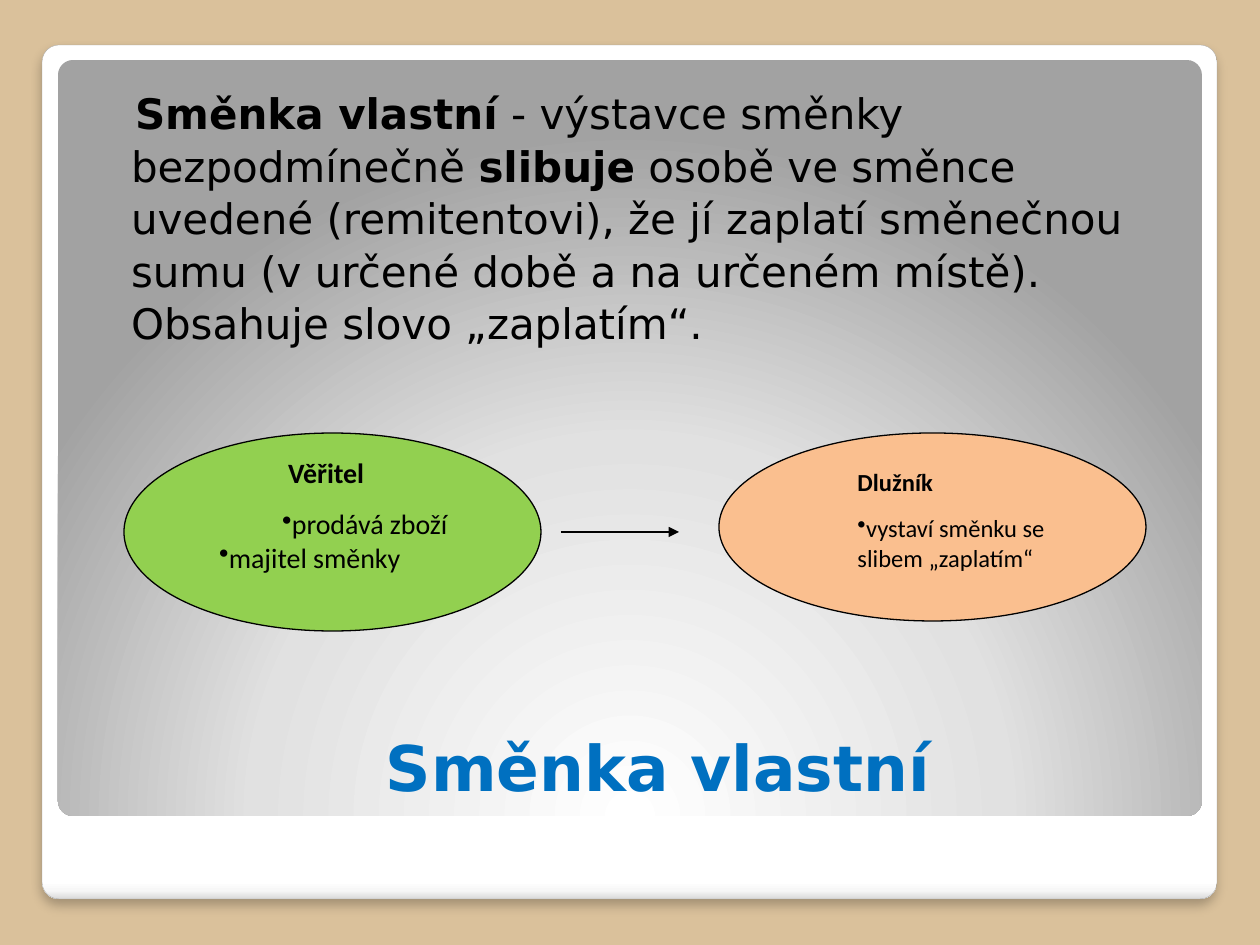
from lxml import etree
from pptx import Presentation
from pptx import util as u
from pptx.dml.color import RGBColor
from pptx.enum import shapes, text
from pptx.oxml.ns import qn

SCALE = 914400 / 126
SANS, BODY = "DejaVu Sans", "Calibri"

PANELS = [
    dict(box=(42, 45, 1175, 854), ang=90, shade=True,
         stops=[(0, "FFFFFF"), (98, "FFFFFF"), (99, "F7F7F7"), (100, "DADADA")]),
    dict(box=(58, 60, 1144, 756), ang=None, shade=False,
         stops=[(0, "FFFFFF"), (55, "E1E1E1"), (100, "A2A2A2")]),
]
TITLE = "Směnka vlastní"
INTRO = [
    ("Směnka vlastní", True),
    (" - výstavce směnky bezpodmínečně ", False),
    ("slibuje", True),
    (" osobě ve směnce uvedené (remitentovi), že jí zaplatí směnečnou sumu "
     "(v\u00a0určené době a na určeném místě). Obsahuje slovo „zaplatím“.", False),
]
PARTIES = [
    dict(box=(124, 433, 417, 198), fill="92D050", size=16, pad=(34, 0, 0, 34),
         anchor=text.MSO_ANCHOR.MIDDLE,
         lines=[("Věřitel", 69), ("prodává zboží", 63), ("majitel směnky", 0)]),
    dict(box=(719, 433, 427, 188), fill="FABF8F", size=14, pad=(13, 6, 13, 6),
         anchor=text.MSO_ANCHOR.TOP,
         lines=[("Dlužník", 63), ("vystaví směnku se slibem „zaplatím“", 63)]),
]
ARROW = (561, 532, 679, 532)


def px(n):
    return u.Emu(round(n * SCALE))


def rgb(code):
    return RGBColor.from_string(code)


def sub(node, tag, **attrs):
    return etree.SubElement(node, qn("a:" + tag), {k: str(v) for k, v in attrs.items()})


def style(para, size, face, color, bold=None):
    font = para.font
    font.size, font.name, font.bold = u.Pt(size), face, bold
    font.color.rgb = rgb(color)


def indent(para, left, first=0):
    props = para._p.get_or_add_pPr()
    props.set("marL", str(px(left)))
    props.set("indent", str(px(first)))
    return props


def frame(shape, pad, anchor):
    tf = shape.text_frame
    tf.word_wrap = True
    tf.margin_left, tf.margin_top, tf.margin_right, tf.margin_bottom = map(px, pad)
    tf.vertical_anchor = anchor
    return tf


def add_panel(slide, box, ang, shade, stops):
    panel = slide.shapes.add_shape(shapes.MSO_SHAPE.ROUNDED_RECTANGLE, *map(px, box))
    panel.adjustments[0] = 0.02
    panel.shadow.inherit = False
    panel.line.fill.background()
    panel.fill.gradient()
    props = panel._element.spPr
    grad = props.find(qn("a:gradFill"))
    for child in list(grad):
        grad.remove(child)
    group = sub(grad, "gsLst")
    for pos, color in stops:
        sub(sub(group, "gs", pos=pos * 1000), "srgbClr", val=color)
    if ang is None:
        way = sub(grad, "path", path="circle")
        sub(way, "fillToRect", l=50000, t=175000, r=50000, b=-75000)
    else:
        sub(grad, "lin", ang=ang * 60000, scaled=0)
    if shade:
        panel.line.color.rgb = rgb("A4A4A4")
        panel.line.width = u.Pt(0.16)
        glow = sub(props.find(qn("a:effectLst")), "outerShdw", blurRad=u.Pt(6),
                   dist=u.Pt(4), dir=5400000, rotWithShape=0)
        sub(sub(glow, "srgbClr", val="000000"), "alpha", val=25000)


def add_intro(slide):
    box = slide.shapes.add_textbox(*map(px, (69, 73, 1128, 668)))
    para = frame(box, (25, 13, 13, 6), text.MSO_ANCHOR.TOP).paragraphs[0]
    indent(para, 37, 4)
    para.line_spacing = 1.04
    style(para, 24, SANS, "000000")
    for words, bold in INTRO:
        run = para.add_run()
        run.text, run.font.bold = words, bold


def add_title(slide):
    box = slide.shapes.add_textbox(*map(px, (94, 701, 1128, 109)))
    para = frame(box, (13, 6, 13, 6), text.MSO_ANCHOR.BOTTOM).paragraphs[0]
    para.text = TITLE
    para.alignment = text.PP_ALIGN.CENTER
    style(para, 36, SANS, "0070C0", True)


def add_party(slide, box, fill, size, pad, anchor, lines):
    oval = slide.shapes.add_shape(shapes.MSO_SHAPE.OVAL, *map(px, box))
    oval.shadow.inherit = False
    oval.fill.solid()
    oval.fill.fore_color.rgb = rgb(fill)
    oval.line.color.rgb = rgb("000000")
    oval.line.width = u.Pt(0.75)
    tf = frame(oval, pad, anchor)
    for i, (words, left) in enumerate(lines):
        para = tf.add_paragraph() if i else tf.paragraphs[0]
        para.text = words
        para.alignment = text.PP_ALIGN.LEFT
        props = indent(para, left)
        if i:
            sub(props, "buChar", char="•")
        else:
            para.space_after = u.Pt(10)
        style(para, size, BODY, "000000", i == 0)


def add_arrow(slide):
    line = slide.shapes.add_connector(shapes.MSO_CONNECTOR.STRAIGHT, *map(px, ARROW))
    line.line.color.rgb = rgb("000000")
    line.line.width = u.Pt(1.25)
    sub(line.line._get_or_add_ln(), "tailEnd", type="triangle")
    sub(line._element.spPr, "effectLst")


def main():
    deck = Presentation()
    deck.slide_width, deck.slide_height = px(1260), px(945)
    slide = deck.slides.add_slide(deck.slide_layouts[6])
    back = slide.background.fill
    back.solid()
    back.fore_color.rgb = rgb("DAC19B")
    for panel in PANELS:
        add_panel(slide, **panel)
    add_title(slide)
    add_intro(slide)
    for party in PARTIES:
        add_party(slide, **party)
    add_arrow(slide)
    deck.save("out.pptx")


if __name__ == "__main__":
    main()
